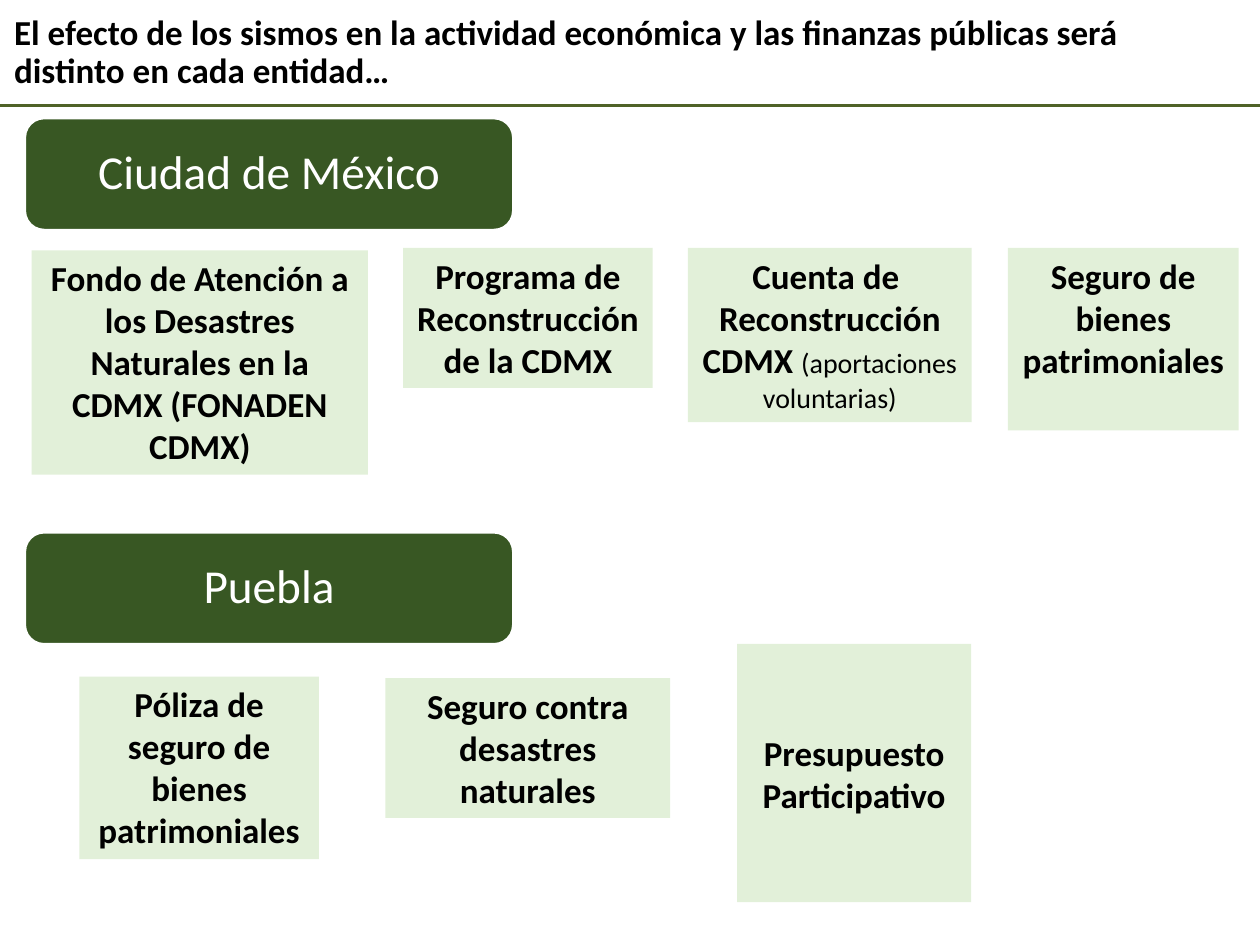
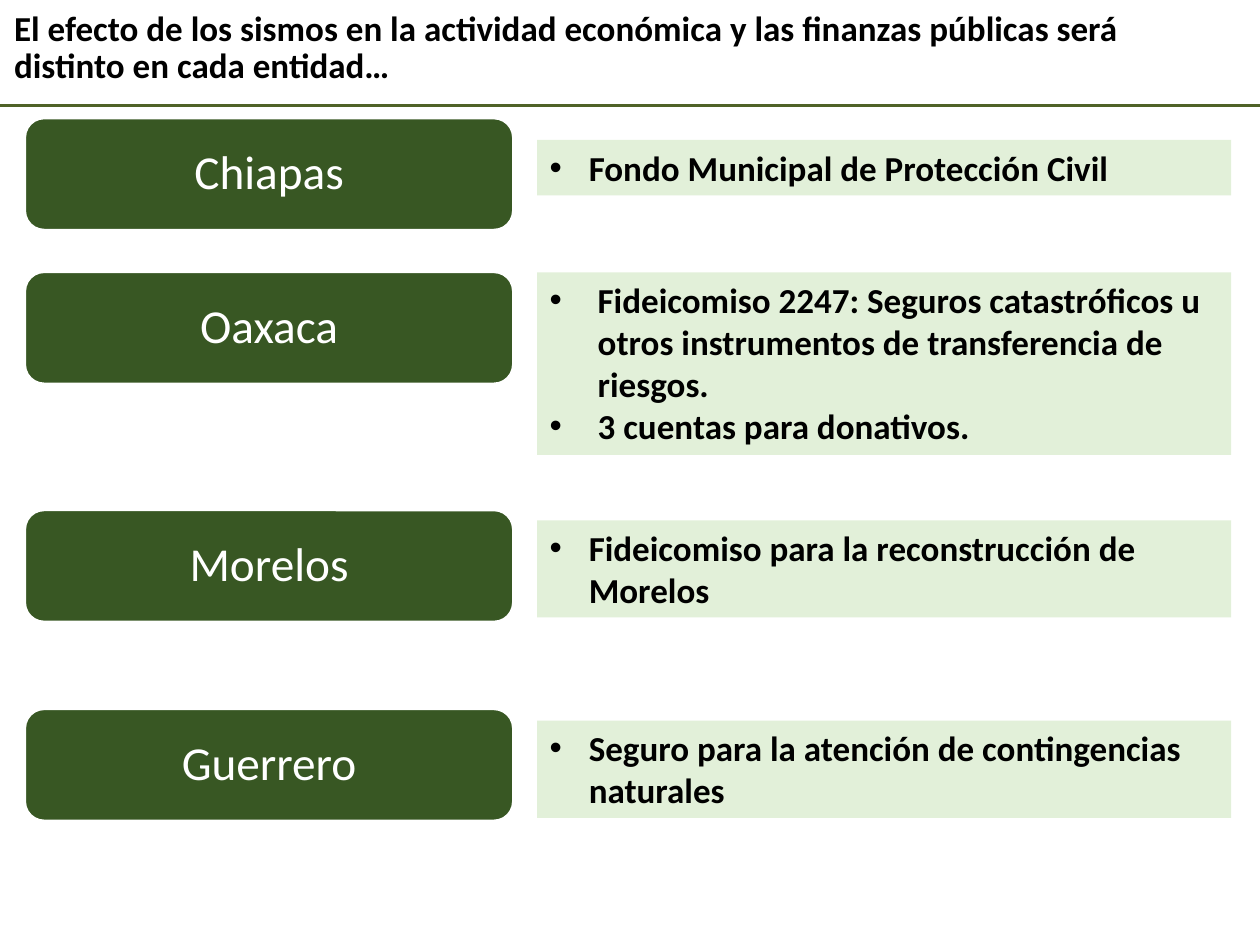
"""Build two slides on how each state pays for earthquake recovery."""
from dataclasses import dataclass

from lxml import etree
from pptx import Presentation
from pptx.dml.color import RGBColor
from pptx.enum.shapes import MSO_CONNECTOR, MSO_SHAPE
from pptx.enum.text import MSO_ANCHOR, MSO_AUTO_SIZE, PP_ALIGN
from pptx.oxml.ns import qn
from pptx.util import Cm, Pt

RECT, ROUNDED = MSO_SHAPE.RECTANGLE, MSO_SHAPE.ROUNDED_RECTANGLE
STRAIGHT = MSO_CONNECTOR.STRAIGHT
TOP, MIDDLE = MSO_ANCHOR.TOP, MSO_ANCHOR.MIDDLE
LEFT, CENTER = PP_ALIGN.LEFT, PP_ALIGN.CENTER
NO_FIT = MSO_AUTO_SIZE.NONE


@dataclass(frozen=True)
class Theme:
    font: str = "Calibri"
    black: RGBColor = RGBColor(0, 0, 0)
    white: RGBColor = RGBColor(255, 255, 255)
    rule: RGBColor = RGBColor(0x4F, 0x62, 0x28)
    state: RGBColor = RGBColor(0x38, 0x57, 0x23)
    fund: RGBColor = RGBColor(0xE2, 0xF0, 0xD9)
    body: Pt = Pt(20)
    note: Pt = Pt(16)
    heading: Pt = Pt(27)


theme = Theme()


def write(s, paragraphs, size, color, bold, align, anchor, spacing=1.0):
    tf = s.text_frame
    tf.text = "\n".join(paragraphs)
    tf.word_wrap = True
    tf.auto_size = NO_FIT
    tf.vertical_anchor = anchor
    for p in tf.paragraphs:
        p.alignment = align
        p.line_spacing = spacing
        for r in p.runs:
            r.font.name, r.font.size = theme.font, size
            r.font.bold, r.font.color.rgb = bold, color


def add_box(slide, kind, box, fill):
    s = slide.shapes.add_shape(kind, *[Cm(v) for v in box])
    s.shadow.inherit = False
    s.fill.solid()
    s.fill.fore_color.rgb = fill
    s.line.fill.background()
    return s


TITLE = ("El efecto de los sismos en la actividad económica y las finanzas "
         "públicas será distinto en cada entidad…")

cdmx_puebla = {
    "title": (0.03, 0.03, 23.09, 2.08),
    "states": [("Ciudad de México", 2.39), ("Puebla", 10.74)],
    "funds": [
        (["Fondo de Atención a los Desastres Naturales en la CDMX (FONADEN CDMX)"],
         (0.64, 5.05, 6.78, 4.52), 0, TOP),
        (["Programa de Reconstrucción de la CDMX"], (8.13, 5, 5.03, 2.82), 0, TOP),
        (["Cuenta de ", "Reconstrucción CDMX |(aportaciones voluntarias)"],
         (13.87, 5, 5.72, 3.51), 0, TOP),
        (["Seguro de bienes patrimoniales"], (20.32, 5, 4.65, 3.68), 0, TOP),
        (["Presupuesto Participativo"], (14.86, 12.98, 4.72, 5.21), 0, MIDDLE),
        (["Póliza de seguro de bienes patrimoniales"],
         (1.6, 13.64, 4.83, 3.68), 0, TOP),
        (["Seguro contra desastres naturales"], (7.77, 13.67, 5.74, 2.82), 0, TOP),
    ],
}
other_states = {
    "title": (0.03, 0.13, 22.86, 1.7),
    "states": [("Chiapas", 2.39), ("Oaxaca", 5.49), ("Morelos", 10.29),
               ("Guerrero", 14.3)],
    "funds": [
        (["Fondo Municipal de Protección Civil"],
         (10.83, 2.82, 13.99, 1.12), 0.79, TOP),
        (["Fideicomiso 2247: Seguros catastróficos u otros instrumentos de "
          "transferencia de riesgos.", "3 cuentas para donativos."],
         (10.83, 5.49, 13.99, 3.68), 0.97, TOP),
        (["Fideicomiso para la reconstrucción de Morelos"],
         (10.83, 10.49, 13.99, 1.96), 0.79, TOP),
        (["Seguro para la atención de contingencias naturales"],
         (10.83, 14.53, 13.99, 1.96), 0.79, TOP),
    ],
}

prs = Presentation()
prs.slide_width, prs.slide_height = Cm(25.4), Cm(19.05)

for content in (cdmx_puebla, other_states):
    slide = prs.slides.add_slide(prs.slide_layouts[5])

    rule = slide.shapes.add_connector(STRAIGHT, 0, Cm(2.13), prs.slide_width, Cm(2.13))
    rule.line.color.rgb = theme.rule
    rule.line.width = Pt(2)
    etree.SubElement(rule._element.spPr, qn("a:effectLst"))

    title = slide.shapes.title
    title.left, title.top, title.width, title.height = [Cm(v) for v in content["title"]]
    write(title, [TITLE], theme.body, theme.black, True, LEFT, MIDDLE, 0.9)

    for state, top in content["states"]:
        s = add_box(slide, ROUNDED, (0.51, top, 9.83, 2.24), theme.state)
        s.adjustments[0] = 0.17
        s.line.color.rgb = theme.white
        s.line.width = Pt(1)
        write(s, [state], theme.heading, theme.white, False, CENTER, MIDDLE, 0.9)

    for paragraphs, box, indent, anchor in content["funds"]:
        s = add_box(slide, RECT, box, theme.fund)
        align = LEFT if indent else CENTER
        main = [text.split("|")[0] for text in paragraphs]
        write(s, main, theme.body, theme.black, True, align, anchor)
        for p, text in zip(s.text_frame.paragraphs, paragraphs):
            if indent:
                pPr = p._p.get_or_add_pPr()
                pPr.set("marL", str(Cm(indent)))
                pPr.set("indent", str(-Cm(indent)))
                etree.SubElement(pPr, qn("a:buFont"), typeface="Arial")
                etree.SubElement(pPr, qn("a:buChar"), char="•")
            for note in text.split("|")[1:]:
                r = p.add_run()
                r.text = note
                r.font.name, r.font.size = theme.font, theme.note
                r.font.bold, r.font.color.rgb = False, theme.black

prs.save("out.pptx")
